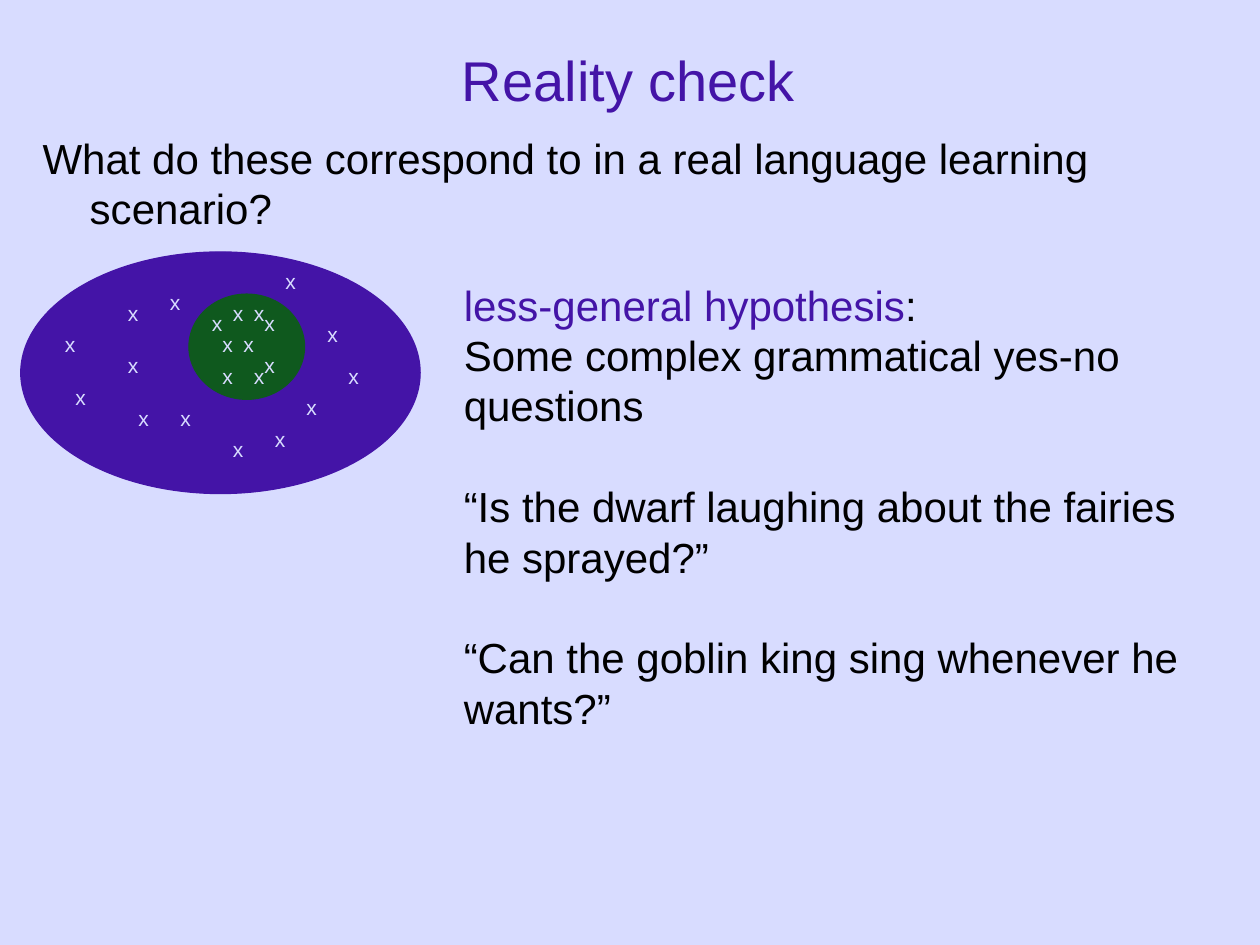
"""Build the "Reality check" slide on a less-general hypothesis."""
from pptx import Presentation
from pptx.dml.color import RGBColor
from pptx.enum.shapes import MSO_SHAPE
from pptx.enum.text import MSO_ANCHOR, MSO_AUTO_SIZE, PP_ALIGN
from pptx.util import Cm, Pt

PURPLE, GREEN, PALE, BLACK = "4414A7", "0F591E", "D8DCFF", "000000"
GRID = 2.54 / 12


def add_box(left, top, width, height, wrap=True, fit=MSO_AUTO_SIZE.NONE):
    box = page.shapes.add_textbox(Cm(left), Cm(top), Cm(width), Cm(height))
    box.text_frame.word_wrap = wrap
    box.text_frame.auto_size = fit
    return box.text_frame


def write(para, text, size=24, color=BLACK, align=PP_ALIGN.LEFT, before=0):
    para.alignment = align
    para.space_before = Pt(before)
    para.line_spacing = Pt(size * 1.2)
    span = para.add_run()
    span.text = text
    span.font.name = "Arial"
    span.font.size = Pt(size)
    span.font.color.rgb = RGBColor.from_string(color)


deck = Presentation()
deck.slide_width, deck.slide_height = Cm(25.4), Cm(19.05)
page = deck.slides.add_slide(deck.slide_layouts[6])
page.background.fill.solid()
page.background.fill.fore_color.rgb = RGBColor.from_string(PALE)

title = add_box(1.88, 0, 21.59, 3.18)
title.vertical_anchor = MSO_ANCHOR.MIDDLE
write(title.paragraphs[0], "Reality check", size=32, color=PURPLE, align=PP_ALIGN.CENTER)

question = add_box(0.61, 2.54, 24.77, 11.43).paragraphs[0]
write(question, "What do these correspond to in a real language learning scenario?")
indent = question._p.get_or_add_pPr()
indent.set("marL", str(Cm(0.95)))
indent.set("indent", str(-Cm(0.95)))

for left, top, width, height, color in [
    (0.42, 5.08, 8.05, 4.87, PURPLE),
    (3.81, 5.93, 2.33, 2.12, GREEN),
]:
    oval = page.shapes.add_shape(MSO_SHAPE.OVAL, Cm(left), Cm(top), Cm(width), Cm(height))
    oval.shadow.inherit = False
    oval.fill.solid()
    oval.fill.fore_color.rgb = RGBColor.from_string(color)
    oval.line.color.rgb = RGBColor.from_string(color)
    oval.line.width = Pt(0.75)

inner_marks = [(21, 28), (24, 29), (20, 34), (23, 34), (20, 31), (22, 31), (24, 33),
               (19, 29), (23, 28)]
outer_marks = [(5, 31), (12, 38), (21, 41), (28, 37), (15, 27), (30, 30), (11, 33),
               (25, 40), (26, 25), (32, 34), (16, 38), (11, 28), (6, 36)]
for column, row in inner_marks + outer_marks:
    mark = add_box(column * GRID, row * GRID, 0.71, 0.76, wrap=False,
                   fit=MSO_AUTO_SIZE.SHAPE_TO_FIT_TEXT)
    write(mark.paragraphs[0], "x", size=12, color=PALE)

answer = add_box(9.1, 5.5, 15.44, 9.37, fit=MSO_AUTO_SIZE.SHAPE_TO_FIT_TEXT)
write(answer.paragraphs[0], "less-general hypothesis", color=PURPLE)
write(answer.paragraphs[0], ":")
for text, before in [
    ("Some complex grammatical yes-no questions", 0),
    ("“Is the dwarf laughing about the fairies he sprayed?”", 28.8),
    ("“Can the goblin king sing whenever he wants?”", 28.8),
]:
    write(answer.add_paragraph(), text, before=before)

deck.save("out.pptx")
